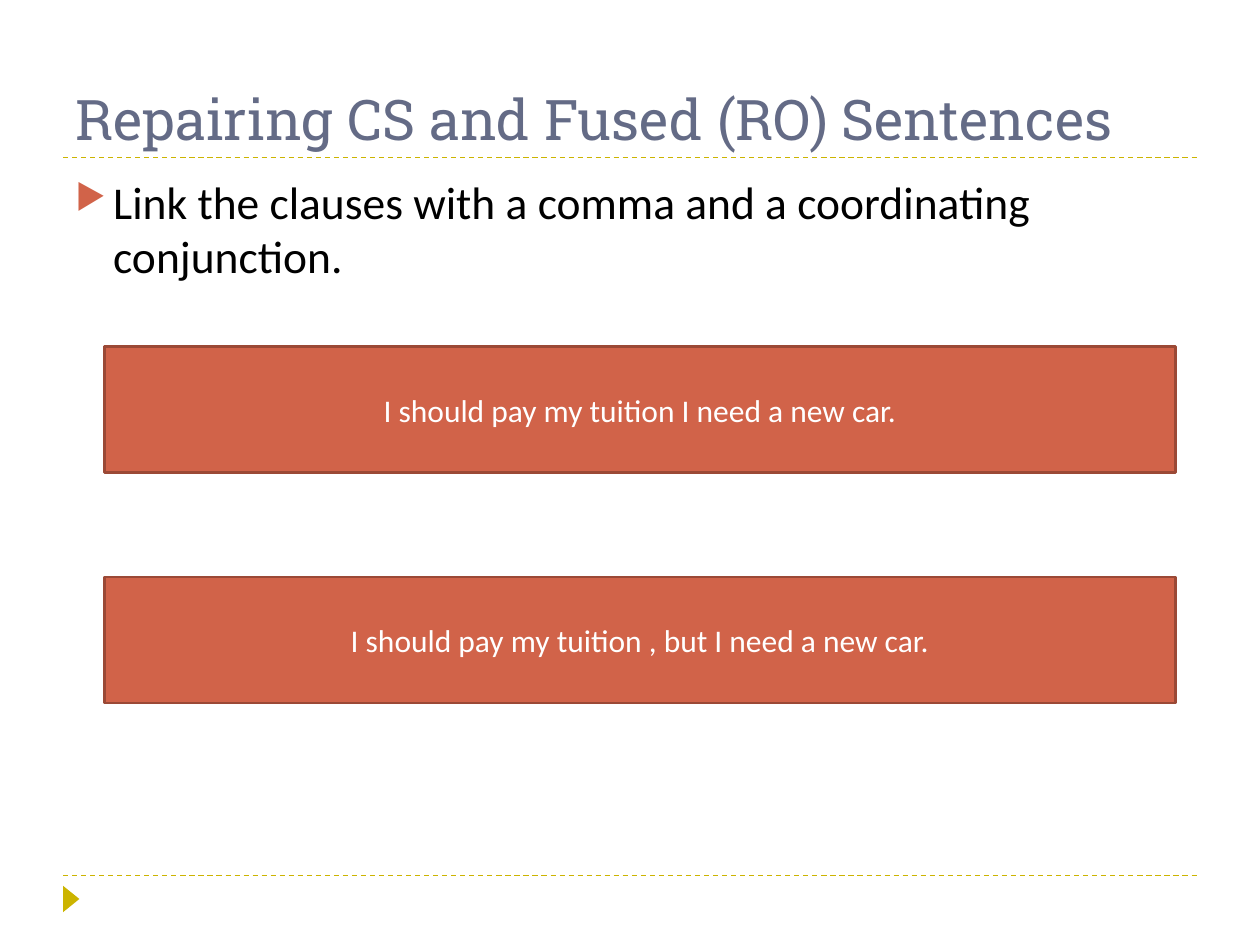
from typing import NamedTuple

from lxml import etree
from pptx import Presentation
from pptx import util as u
from pptx.dml.color import RGBColor
from pptx.enum import dml, shapes, text
from pptx.oxml import ns

GOLD = RGBColor(0xCC, 0xB4, 0x00)
SLATE = RGBColor(0x64, 0x6B, 0x86)
RUST = RGBColor(0xD1, 0x63, 0x49)
BROWN = RGBColor(0x9B, 0x49, 0x36)
BLACK = RGBColor(0, 0, 0)
WHITE = RGBColor(255, 255, 255)

WIDTH, HEIGHT = u.Inches(10), u.Inches(7.5)
EDGE = 0.05
SPAN = 1 - 2 * EDGE


class Box(NamedTuple):
    left: float
    top: float
    wide: float
    high: float

    def place(self) -> tuple[int, int, int, int]:
        return (round(self.left * WIDTH), round(self.top * HEIGHT),
                round(self.wide * WIDTH), round(self.high * HEIGHT))


class Style(NamedTuple):
    face: str
    size: int
    color: RGBColor


class Card(NamedTuple):
    words: str
    top: float


HEAD = Style("Roboto Slab", 32, SLATE)
BODY = Style("Calibri", 26, BLACK)
NOTE = Style("Calibri", 18, WHITE)

RULES = (6.95 / 7.5, 1.25 / 7.5)
CARDS = (
    Card("I should pay my tuition I need a new car.", 2.75 / 7.5),
    Card("I should pay my tuition , but I need a new car.", 4.58 / 7.5),
)


def write(shape, words: str, style: Style, anchor):
    frame = shape.text_frame
    frame.word_wrap = True
    frame.vertical_anchor = anchor
    para = frame.paragraphs[0]
    para.text = words
    para.font.name = style.face
    para.font.size = u.Pt(style.size)
    para.font.color.rgb = style.color
    return para


def add_text(slide, box: Box, words: str, style: Style, anchor):
    return write(slide.shapes.add_textbox(*box.place()), words, style, anchor)


def add_rule(slide, top: float) -> None:
    y = round(top * HEIGHT)
    rule = slide.shapes.add_connector(
        shapes.MSO_CONNECTOR.STRAIGHT,
        round(EDGE * WIDTH), y, round((1 - EDGE) * WIDTH), y)
    rule.line.color.rgb = GOLD
    rule.line.width = u.Pt(0.75)
    rule.line.dash_style = dml.MSO_LINE.DASH
    etree.SubElement(rule._element.spPr, ns.qn("a:effectLst"))


def add_shape(slide, kind, box: Box, fill: RGBColor):
    shape = slide.shapes.add_shape(kind, *box.place())
    shape.shadow.inherit = False
    shape.fill.solid()
    shape.fill.fore_color.rgb = fill
    return shape


def add_mark(slide) -> None:
    box = Box(0.046, 7.07 / 7.5, 0.021, 0.13 / 7.5)
    mark = add_shape(slide, shapes.MSO_SHAPE.ISOSCELES_TRIANGLE, box, GOLD)
    mark.line.fill.background()
    mark.rotation = 90


def add_card(slide, card: Card) -> None:
    box = Box(0.083, card.top, 0.85, 1 / 7.5)
    shape = add_shape(slide, shapes.MSO_SHAPE.RECTANGLE, box, RUST)
    shape.line.color.rgb = BROWN
    shape.line.width = u.Pt(1.5)
    para = write(shape, card.words, NOTE, text.MSO_ANCHOR.MIDDLE)
    para.alignment = text.PP_ALIGN.CENTER


def add_bullet(para) -> None:
    para.space_before = u.Pt(6)
    props = para._p.get_or_add_pPr()
    props.set("marL", str(u.Inches(0.3)))
    props.set("indent", str(-u.Inches(0.3)))
    tint = etree.Element(ns.qn("a:buClr"))
    etree.SubElement(tint, ns.qn("a:srgbClr"), val=str(RUST))
    size = etree.Element(ns.qn("a:buSzPct"), val="76000")
    sign = etree.Element(ns.qn("a:buChar"), char="▶")
    rest = props.find(ns.qn("a:defRPr"))
    for part in (tint, size, sign):
        rest.addprevious(part)


def main() -> None:
    deck = Presentation()
    deck.slide_width, deck.slide_height = WIDTH, HEIGHT
    slide = deck.slides.add_slide(deck.slide_layouts[6])
    for top in RULES:
        add_rule(slide, top)
    add_mark(slide)
    add_text(slide, Box(EDGE, 0.17 / 7.5, SPAN, 1.08 / 7.5),
             "Repairing CS and Fused (RO) Sentences", HEAD,
             text.MSO_ANCHOR.BOTTOM)
    para = add_text(
        slide, Box(EDGE, 1.33 / 7.5, SPAN, 0.72),
        "Link the clauses with a comma and a coordinating conjunction.",
        BODY, text.MSO_ANCHOR.TOP)
    add_bullet(para)
    for card in CARDS:
        add_card(slide, card)
    deck.save("out.pptx")


if __name__ == "__main__":
    main()
